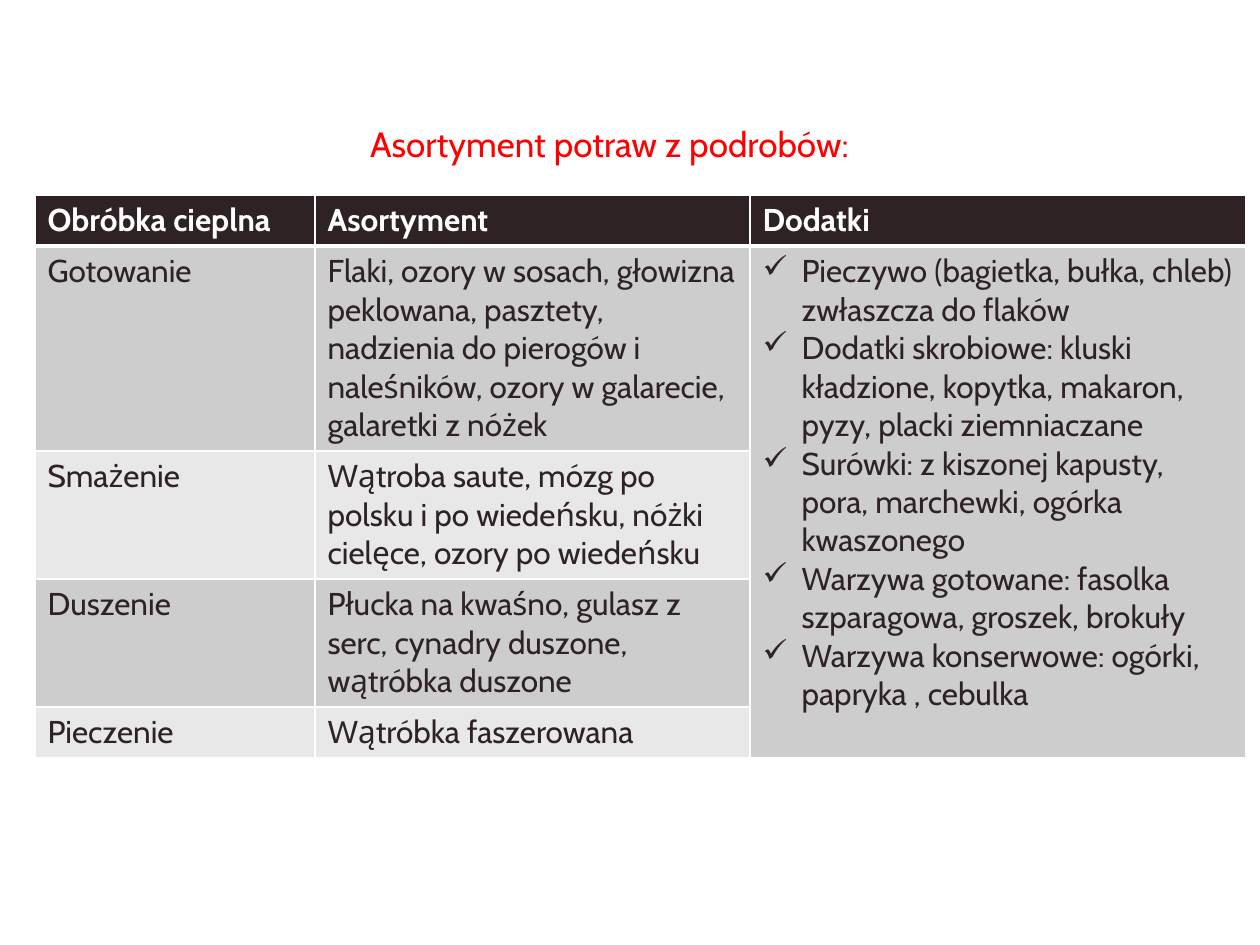
from dataclasses import dataclass

from lxml import etree
from pptx import Presentation
from pptx import util as u
from pptx.dml.color import RGBColor
from pptx.enum import text
from pptx.oxml.ns import qn

EMU_PER_PX = 914400 / 126
FONT = "Cabin"
DARK, WHITE, RED = "2E2224", "FFFFFF", "FF0000"
BANDS = ("CDCDCD", "E8E8E8")
TITLE = "Asortyment potraw z podrobów:"
HEADERS = ("Obróbka cieplna", "Asortyment", "Dodatki")
COLUMN_WIDTHS = (280, 435, 496)
HEADER_HEIGHT = 51
SIDES = ("lnL", "lnR", "lnT", "lnB")


@dataclass
class Treatment:
    name: str
    dishes: str
    height: int


TREATMENTS = (
    Treatment("Gotowanie", "Flaki, ozory w sosach, głowizna peklowana, pasztety, nadzienia do "
              "pierogów i naleśników, ozory w galarecie, galaretki z nóżek", 202),
    Treatment("Smażenie", "Wątroba saute, mózg po polsku i po wiedeńsku, nóżki cielęce, "
              "ozory po wiedeńsku", 126),
    Treatment("Duszenie", "Płucka na kwaśno, gulasz z serc, cynadry duszone, "
              "wątróbka duszone", 126),
    Treatment("Pieczenie", "Wątróbka faszerowana", 50),
)
SIDE_DISHES = (
    "Pieczywo (bagietka, bułka, chleb) zwłaszcza do flaków",
    "Dodatki skrobiowe: kluski kładzione, kopytka, makaron, pyzy, placki ziemniaczane",
    "Surówki: z kiszonej kapusty, pora, marchewki, ogórka kwaszonego",
    "Warzywa gotowane: fasolka szparagowa, groszek, brokuły",
    "Warzywa konserwowe: ogórki, papryka , cebulka",
)


def px(length: int) -> u.Emu:
    return u.Emu(round(length * EMU_PER_PX))


def color(value: str) -> RGBColor:
    return RGBColor.from_string(value)


def set_font(paragraph, size: int, value: str, bold: bool = False) -> None:
    paragraph.font.name = FONT
    paragraph.font.size = u.Pt(size)
    paragraph.font.bold = bold
    paragraph.font.color.rgb = color(value)


def add_border(cell, side: str, width: int) -> None:
    properties = cell._tc.get_or_add_tcPr()
    line = etree.SubElement(properties, qn(f"a:{side}"), w=str(u.Pt(width)))
    fill = etree.SubElement(line, qn("a:solidFill"))
    etree.SubElement(fill, qn("a:srgbClr"), val=WHITE)


def add_check_bullet(paragraph) -> None:
    properties = paragraph._p.get_or_add_pPr()
    properties.set("marL", str(px(39)))
    properties.set("indent", str(-px(39)))
    bullet = etree.Element(qn("a:buChar"), char="✓")
    properties.insert(0, bullet)


def style_cell(cell, row: int, fill: str) -> None:
    """Draw white borders, thick under the header row, and fill the cell."""
    thick_side = {0: "lnB", 1: "lnT"}.get(row)
    for side in SIDES:
        add_border(cell, side, 3 if side == thick_side else 1)
    cell.fill.solid()
    cell.fill.fore_color.rgb = color(fill)


def write_cell(cell, content: str, value: str = DARK, bold: bool = False) -> None:
    cell.text = content
    for paragraph in cell.text_frame.paragraphs:
        set_font(paragraph, 18, value, bold)


def add_title(slide) -> None:
    title = slide.shapes.title
    title.left, title.top, title.width, title.height = map(px, (123, 116, 973, 131))
    frame = title.text_frame
    frame.text = TITLE
    frame.word_wrap = True
    frame.auto_size = text.MSO_AUTO_SIZE.NONE
    frame.vertical_anchor = text.MSO_ANCHOR.TOP
    paragraph = frame.paragraphs[0]
    paragraph.alignment = text.PP_ALIGN.CENTER
    set_font(paragraph, 20, RED)


def add_dishes_table(slide) -> None:
    heights = [HEADER_HEIGHT] + [treatment.height for treatment in TREATMENTS]
    table = slide.shapes.add_table(
        len(heights), len(HEADERS), px(35), px(195),
        px(sum(COLUMN_WIDTHS)), px(sum(heights))).table
    table.first_row = table.horz_banding = False
    for column, width in zip(table.columns, COLUMN_WIDTHS):
        column.width = px(width)
    for row, height in zip(table.rows, heights):
        row.height = px(height)

    for index, header in enumerate(HEADERS):
        style_cell(table.cell(0, index), 0, DARK)
        write_cell(table.cell(0, index), header, WHITE, bold=True)
    for row, treatment in enumerate(TREATMENTS, start=1):
        band = BANDS[(row - 1) % 2]
        for column, fill in enumerate((band, band, BANDS[0])):
            style_cell(table.cell(row, column), row, fill)
        write_cell(table.cell(row, 0), treatment.name)
        write_cell(table.cell(row, 1), treatment.dishes)

    side_dishes = table.cell(1, 2)
    side_dishes.merge(table.cell(len(TREATMENTS), 2))
    write_cell(side_dishes, "\n".join(SIDE_DISHES))
    for paragraph in side_dishes.text_frame.paragraphs:
        add_check_bullet(paragraph)


def main() -> None:
    presentation = Presentation()
    presentation.slide_width, presentation.slide_height = px(1260), px(945)
    slide = presentation.slides.add_slide(presentation.slide_layouts[5])
    add_title(slide)
    add_dishes_table(slide)
    presentation.save("out.pptx")


if __name__ == "__main__":
    main()
